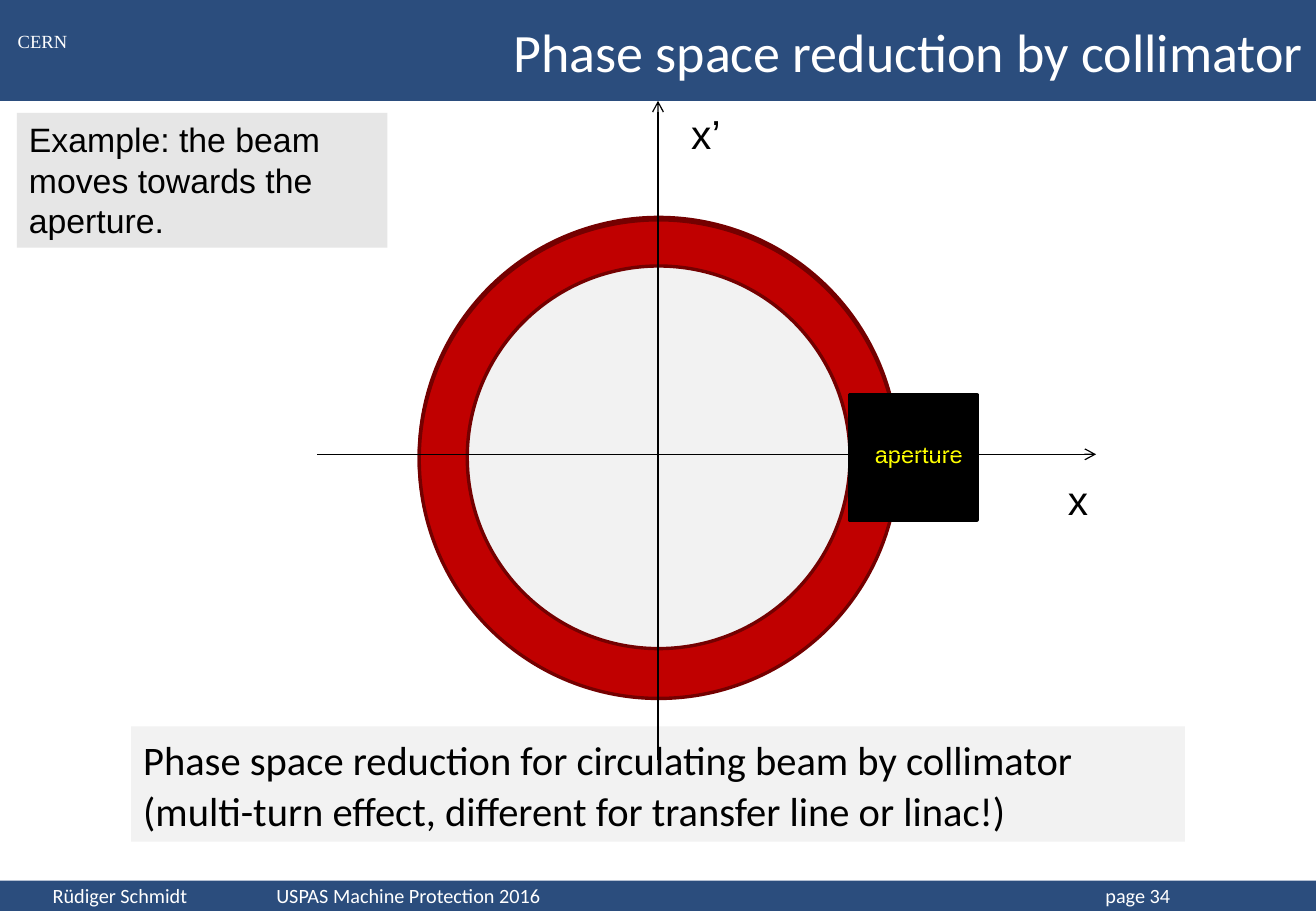
import collections
import lxml.etree
import pptx
import pptx.dml.color
import pptx.enum.shapes
import pptx.enum.text
import pptx.oxml
import pptx.oxml.ns
import pptx.util

RGBColor = pptx.dml.color.RGBColor
SHAPE = pptx.enum.shapes.MSO_SHAPE
ALIGN = pptx.enum.text.PP_ALIGN
ANCHOR = pptx.enum.text.MSO_ANCHOR

NAVY = RGBColor(0x06, 0x2F, 0x67)
WHITE = RGBColor(0xFF, 0xFF, 0xFF)
BLACK = RGBColor(0x00, 0x00, 0x00)
YELLOW = RGBColor(0xFF, 0xFF, 0x00)
RED = RGBColor(0xC0, 0x00, 0x00)
DARK_RED = RGBColor(0x74, 0x00, 0x00)
PALE_GREY = RGBColor(0xF2, 0xF2, 0xF2)
LIGHT_GREY = RGBColor(0xE6, 0xE6, 0xE6)

Box = collections.namedtuple("Box", "left top width height")


def inside(box, left, top, width, height):
    return Box(
        int(box.left + box.width * left / 100),
        int(box.top + box.height * top / 100),
        int(box.width * width / 100),
        int(box.height * height / 100),
    )


def centred(box, x, y, width, height):
    return inside(box, x - width / 2, y - height / 2, width, height)


def apply(target, formats):
    for name, value in formats.items():
        setattr(target, name, value)


def write(shape, text, font, size, color, frame_format=None, para_format=None):
    frame = shape.text_frame
    apply(frame, {"word_wrap": True, "vertical_anchor": ANCHOR.TOP, **(frame_format or {})})
    para = frame.paragraphs[0]
    para.text = text
    apply(para, {"alignment": ALIGN.LEFT, **(para_format or {})})
    apply(para.font, {"name": font, "size": pptx.util.Pt(size)})
    para.font.color.rgb = color
    return para


def add_label(page, box, text, font, size, color, **formats):
    label = page.shapes.add_textbox(*box)
    write(label, text, font, size, color, **formats)


def add_block(page, kind, box, fill, line=None):
    block = page.shapes.add_shape(kind, *box)
    block.shadow.inherit = False
    block.fill.solid()
    block.fill.fore_color.rgb = fill
    if line is None:
        block.line.fill.background()
    else:
        block.line.color.rgb = line
        block.line.width = pptx.util.Pt(2)
    return block


def add_bar(page, box):
    bar = add_block(page, SHAPE.RECTANGLE, box, NAVY)
    color = bar.fill._xPr.find(".//" + pptx.oxml.ns.qn("a:srgbClr"))
    lxml.etree.SubElement(color, pptx.oxml.ns.qn("a:alpha"), val="85000")
    return bar


def add_axis(page, start, end):
    axis = page.shapes.add_connector(
        pptx.enum.shapes.MSO_CONNECTOR.STRAIGHT, *start, *end)
    axis.line.color.rgb = BLACK
    axis.line.width = pptx.util.Pt(0.75)
    lxml.etree.SubElement(axis.line._get_or_add_ln(), pptx.oxml.ns.qn("a:tailEnd"), type="arrow")
    lxml.etree.SubElement(axis._element.spPr, pptx.oxml.ns.qn("a:effectLst"))
    return axis


def add_header(page, box):
    bar = add_bar(page, box)
    add_label(page, inside(box, 0, 24.1, 6.46, 34.9), "CERN", "Times New Roman", 11, WHITE,
              frame_format={"word_wrap": False}, para_format={"alignment": ALIGN.CENTER})
    title = page.shapes.title
    apply(title, inside(box, 8.31, 0, 91.69, 100)._asdict())
    write(title, "Phase space reduction by collimator", "Calibri", 32, WHITE,
          {"vertical_anchor": ANCHOR.MIDDLE}, {"alignment": ALIGN.RIGHT})
    page.shapes._spTree.append(title._element)
    return bar


def add_footer(page, box):
    bar = add_bar(page, box)
    para = write(bar, "Rüdiger Schmidt\tUSPAS Machine Protection 2016\tpage 34", "Calibri", 12, WHITE,
                 {"vertical_anchor": ANCHOR.MIDDLE, "margin_left": int(box.width * 0.04),
                  "margin_top": 0, "margin_bottom": 0})
    tabs = pptx.oxml.parse_xml(f"<a:tabLst {pptx.oxml.ns.nsdecls('a')}/>")
    for share in (0.17, 0.8):
        lxml.etree.SubElement(tabs, pptx.oxml.ns.qn("a:tab"), pos=str(int(box.width * share)), algn="l")
    para._p.pPr.insert_element_before(tabs, "a:defRPr", "a:extLst")


def add_note(page, box, fill, text, font, size, spacing):
    note = add_block(page, SHAPE.RECTANGLE, box, fill)
    write(note, text, font, size, BLACK, para_format={"line_spacing": spacing})


def add_phase_space(page, box, header_bar):
    middle, axis_row = 43.84, 53.59
    for y, width, height, fill in (
        (53.96, 61.47, 72.56, PALE_GREY),
        (54.33, 61.47, 72.56, RED),
        (54.05, 49.14, 58.01, PALE_GREY),
    ):
        add_block(page, SHAPE.OVAL, centred(box, middle, y, width, height), fill, DARK_RED)
    add_block(page, SHAPE.RECTANGLE, inside(box, 68.33, 44.57, 16.38, 18.97), BLACK, BLACK)

    for text, area, size, color in (
        ("x", (94.85, 55.8, 5.77, 9.21), 24, BLACK),
        ("x’", (46.49, 0.37, 7.02, 9.21), 24, BLACK),
        ("aperture", (70.05, 50.46, 14.51, 6.26), 14, YELLOW),
    ):
        add_label(page, inside(box, *area), text, "Arial", size, color,
                  frame_format={"word_wrap": False})

    centre = header_bar.left + header_bar.width // 2
    vertical = add_axis(page, (centre, box.top + box.height), (centre, box.top))
    vertical.end_connect(header_bar, 2)
    level = int(box.top + box.height * axis_row / 100)
    add_axis(page, (box.left, level), (box.left + box.width, level))


def main():
    deck = pptx.Presentation()
    deck.slide_width = pptx.util.Inches(10.83)
    deck.slide_height = pptx.util.Inches(7.5)
    page = deck.slides.add_slide(deck.slide_layouts[5])
    whole = Box(0, 0, deck.slide_width, deck.slide_height)

    header_bar = add_header(page, inside(whole, 0, 0, 100, 11.07))
    add_footer(page, inside(whole, 0, 96.67, 100, 3.33))
    add_note(page, inside(whole, 9.97, 79.73, 80.06, 12.67), PALE_GREY,
             "Phase space reduction for circulating beam by collimator "
             "(multi-turn effect, different for transfer line or linac!)", "Calibri", 24, 1.05)
    add_phase_space(page, inside(whole, 24.1, 11.07, 59.19, 72.4), header_bar)
    add_note(page, inside(whole, 1.29, 12.4, 28.16, 14.8), LIGHT_GREY,
             "Example: the beam moves towards the aperture.", "Arial", 20, 1.0)
    deck.save("out.pptx")


if __name__ == "__main__":
    main()
